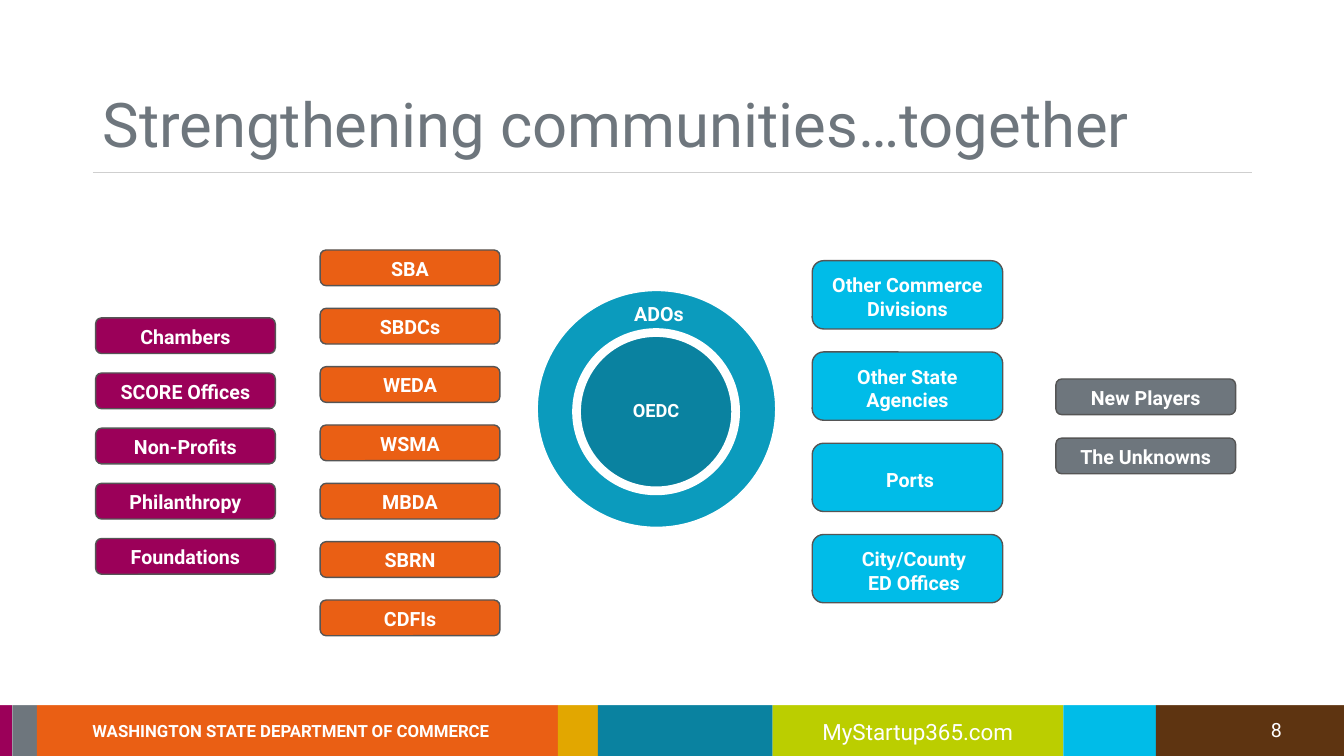
from itertools import pairwise

from lxml.etree import SubElement
from pptx import Presentation
from pptx.dml.color import RGBColor
from pptx.enum.shapes import MSO_CONNECTOR as Link, MSO_SHAPE as Geo
from pptx.enum.text import MSO_ANCHOR as Anchor, PP_ALIGN as Align
from pptx.oxml.ns import qn
from pptx.util import Cm, Pt

WHITE, ORANGE, PLUM, GREY = "FFFFFF", "EA5F14", "9B0059", "6E767D"
TEAL, SKY, EDGE = "0A82A0", "00BCE8", "555555"
WIDE, HIGH = 33.87, 19.05

BANDS = [PLUM, GREY, ORANGE, "E2A700", TEAL, "BBCE00", SKY, "5E3411"]
STOPS = [0, 0.31, 0.93, 14.06, 15.07, 19.47, 26.8, 29.13, WIDE]

SMALL = {"width": 4.53, "height": 0.9, "space": 0.9}
LARGE = {"width": 4.8, "height": 1.72, "space": 1.0}
STACKS = [
    (2.41, 8.01, 1.39, PLUM, SMALL,
     ["Chambers", "SCORE Offices", "Non-Profits", "Philanthropy", "Foundations"]),
    (8.07, 6.3, 1.47, ORANGE, SMALL,
     ["SBA", "SBDCs", "WEDA", "WSMA", "MBDA", "SBRN", "CDFIs"]),
    (20.47, 6.57, 2.3, SKY, LARGE,
     ["Other Commerce\vDivisions", "Other State\vAgencies", "Ports",
      "City/County\vED Offices"]),
    (26.61, 9.55, 1.49, GREY, SMALL, ["New Players", "The Unknowns"]),
]
NUDGE = {"Ports": 0.13, "City/County\vED Offices": 0.33}


def tint(code):
    return RGBColor.from_string(code)


def apply(item, values):
    for name, value in values.items():
        setattr(item, name, value)


def write(shape, text, size, bold=False, color=WHITE, align=Align.CENTER,
          space=1.0, **frame):
    apply(shape.text_frame, {"word_wrap": True, **frame})
    para = shape.text_frame.paragraphs[0]
    para.text = text
    apply(para, {"alignment": align, "line_spacing": space})
    apply(para.font, {"name": "Roboto", "size": Pt(size), "bold": bold})
    para.font.color.rgb = tint(color)


def label(slide, box, text, size, **style):
    area = slide.shapes.add_textbox(*map(Cm, box))
    write(area, text, size, **style)


def block(slide, geo, box, fill, edge=None, weight=1):
    shape = slide.shapes.add_shape(geo, *map(Cm, box))
    shape.shadow.inherit = False
    shape.fill.solid()
    shape.fill.fore_color.rgb = tint(fill)
    if edge:
        shape.line.color.rgb = tint(edge)
        shape.line.width = Pt(weight)
    else:
        shape.line.fill.background()
    return shape


def rule(slide, left, right, top):
    line = slide.shapes.add_connector(
        Link.STRAIGHT, Cm(left), Cm(top), Cm(right), Cm(top))
    line.line.color.rgb = tint("CFCFCF")
    line.line.width = Pt(1)
    SubElement(line._element.spPr, qn("a:effectLst"))


def footer(slide):
    for (left, right), fill in zip(pairwise(STOPS), BANDS):
        block(slide, Geo.RECTANGLE, (left, 17.65, right - left, HIGH - 17.65), fill)
    block(slide, Geo.RECTANGLE, (0, 17.55, WIDE, 0.22), WHITE)
    label(slide, (2.08, 18.03, 10.74, 0.77),
          "WASHINGTON STATE DEPARTMENT OF COMMERCE", 12,
          bold=True, align=Align.LEFT, word_wrap=False)
    label(slide, (19.51, 17.98, 7.24, 0.94), "MyStartup365.com", 16)
    label(slide, (31.78, 17.96, 1.12, 0.86), "8", 14,
          align=Align.LEFT, word_wrap=False)


def stack(slide, left, top, pitch, fill, kind, names):
    for row, name in enumerate(names):
        box = (left, top + row * pitch, kind["width"], kind["height"])
        shape = block(slide, Geo.ROUNDED_RECTANGLE, box, fill, EDGE)
        write(shape, name, 14, bold=True, space=kind["space"],
              vertical_anchor=Anchor.MIDDLE, margin_top=Cm(0.1),
              margin_bottom=0, margin_left=Cm(NUDGE.get(name, 0)),
              margin_right=0)


def hub(slide):
    block(slide, Geo.OVAL, (13.54, 7.32, 6.01, 5.97), "0B9BBD", WHITE)
    core = block(slide, Geo.OVAL, (14.53, 8.38, 4.01, 3.99), TEAL, WHITE, 6.25)
    write(core, "OEDC", 13, bold=True, space=0.9, vertical_anchor=Anchor.MIDDLE)
    label(slide, (15.66, 7.54, 1.9, 0.79), "ADOs", 14,
          bold=True, space=0.9, word_wrap=False)


def main():
    deck = Presentation()
    apply(deck, {"slide_width": Cm(WIDE), "slide_height": Cm(HIGH)})
    slide = deck.slides.add_slide(deck.slide_layouts[6])
    footer(slide)
    rule(slide, 2.34, 31.55, 4.34)
    label(slide, (2.34, 0.79, 29.21, 3.38), "Strengthening communities…together",
          44, color=GREY, align=Align.LEFT, space=0.9,
          vertical_anchor=Anchor.BOTTOM)
    hub(slide)
    for column in STACKS:
        stack(slide, *column)
    deck.save("out.pptx")


if __name__ == "__main__":
    main()
